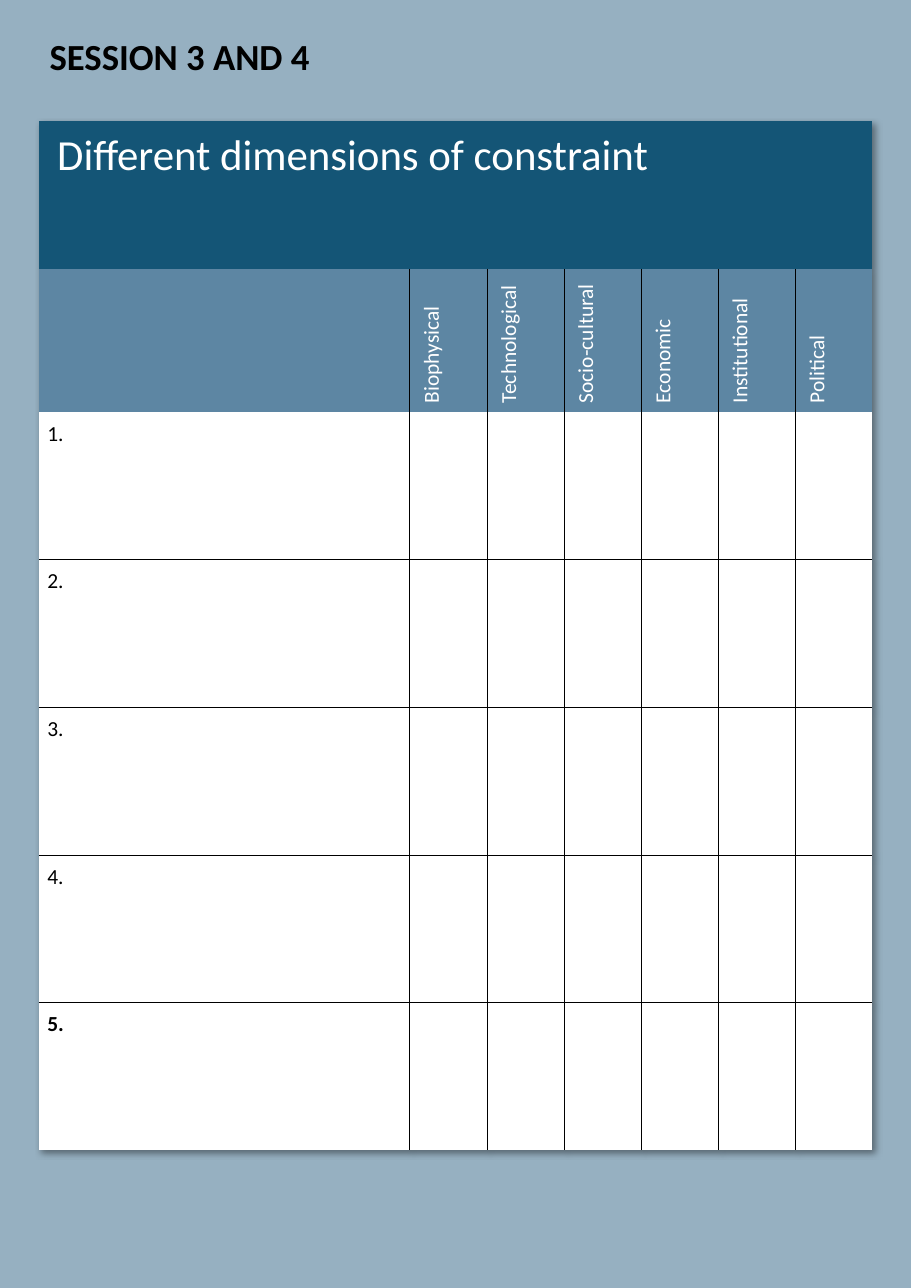
from lxml.etree import SubElement
from pptx import Presentation
from pptx.dml.color import RGBColor
from pptx.enum.text import MSO_ANCHOR, MSO_AUTO_SIZE, PP_ALIGN
from pptx.oxml.ns import qn
from pptx.util import Inches, Pt

COLORS = {
    "background": "96B0C1",
    "banner": "145576",
    "header": "5D86A3",
    "white": "FFFFFF",
    "black": "000000",
}
FONT = "Calibri"
SLIDE_W, SLIDE_H = 8.27, 11.69
LEFT, TABLE_TOP = 0.35, 1.1
NOTE_W, CHECK_W = 3.37, 0.7
ROW_H, HEADER_H = 1.34, 1.3
MARGIN = 0.08
DIMENSIONS = ["Biophysical", "Technological", "Socio-cultural",
              "Economic", "Institutional", "Political"]
CONSTRAINTS = 5
COLS, ROWS = 1 + len(DIMENSIONS), 2 + CONSTRAINTS
FIRST_BODY = 2


def rgb(name):
    return RGBColor.from_string(COLORS[name])


def add_run(tf, text, size, color, bold=False):
    p = tf.paragraphs[0]
    p.alignment = PP_ALIGN.LEFT
    r = p.add_run()
    r.text = text
    r.font.name = FONT
    r.font.size = Pt(size)
    r.font.bold = bold
    r.font.color.rgb = rgb(color)


def add_title(slide, text):
    sp = slide.shapes.title
    sp.left, sp.top = Inches(LEFT), Inches(0.26)
    sp.width, sp.height = Inches(SLIDE_W - 2 * LEFT), Inches(0.5)
    tf = sp.text_frame
    tf.word_wrap = True
    tf.auto_size = MSO_AUTO_SIZE.SHAPE_TO_FIT_TEXT
    tf.vertical_anchor = MSO_ANCHOR.TOP
    add_run(tf, text, 24, "black", bold=True)


def set_borders(cell, row, col):
    """Draw only the inner grid lines below the banner."""
    shown = {
        "lnL": row > 0 and col > 0,
        "lnR": row > 0 and col < COLS - 1,
        "lnT": row > FIRST_BODY,
        "lnB": FIRST_BODY <= row < ROWS - 1,
    }
    tc_pr = cell._tc.get_or_add_tcPr()
    for side, visible in shown.items():
        ln = SubElement(tc_pr, qn(f"a:{side}"), w=str(Pt(0.5)))
        if visible:
            fill = SubElement(ln, qn("a:solidFill"))
            SubElement(fill, qn("a:srgbClr"), val=COLORS["black"])
        else:
            SubElement(ln, qn("a:noFill"))


def style_cell(cell, row, col):
    set_borders(cell, row, col)
    cell.fill.solid()
    cell.fill.fore_color.rgb = rgb(
        ("banner", "header")[row] if row < FIRST_BODY else "white")
    cell.margin_left = cell.margin_right = Inches(MARGIN)
    cell.margin_top = cell.margin_bottom = Inches(MARGIN)


def add_shadow(table):
    effects = SubElement(table._tbl.tblPr, qn("a:effectLst"))
    shadow = SubElement(effects, qn("a:outerShdw"), blurRad=str(Pt(4)),
                        dist=str(Pt(3)), dir="2700000", algn="tl")
    color = SubElement(shadow, qn("a:srgbClr"), val=COLORS["black"])
    SubElement(color, qn("a:alpha"), val="40000")


def add_grid(slide):
    widths = [NOTE_W] + [CHECK_W] * len(DIMENSIONS)
    heights = [ROW_H, HEADER_H] + [ROW_H] * CONSTRAINTS
    table = slide.shapes.add_table(
        ROWS, COLS, Inches(LEFT), Inches(TABLE_TOP),
        Inches(sum(widths)), Inches(sum(heights))).table
    table.first_row = table.horz_banding = False
    for column, width in zip(table.columns, widths):
        column.width = Inches(width)
    for row, height in zip(table.rows, heights):
        row.height = Inches(height)
    for row in range(ROWS):
        for col in range(COLS):
            style_cell(table.cell(row, col), row, col)
    add_shadow(table)
    return table


def fill_grid(table):
    # Banner across all columns
    banner = table.cell(0, 0)
    banner.merge(table.cell(0, COLS - 1))
    banner.margin_left = Inches(0.17)
    add_run(banner.text_frame, "Different dimensions of constraint", 28, "white")

    # Rotated column headings
    for col, name in enumerate(DIMENSIONS, 1):
        cell = table.cell(1, col)
        cell.vertical_anchor = MSO_ANCHOR.MIDDLE
        cell._tc.get_or_add_tcPr().set("vert", "vert270")
        add_run(cell.text_frame, name, 14, "white")

    # Numbered rows, the last number in bold
    for number in range(1, CONSTRAINTS + 1):
        cell = table.cell(FIRST_BODY + number - 1, 0)
        add_run(cell.text_frame, f"{number}.", 14, "black",
                bold=number == CONSTRAINTS)


def main():
    prs = Presentation()
    prs.slide_width, prs.slide_height = Inches(SLIDE_W), Inches(SLIDE_H)
    slide = prs.slides.add_slide(prs.slide_layouts[5])
    slide.background.fill.solid()
    slide.background.fill.fore_color.rgb = rgb("background")

    fill_grid(add_grid(slide))
    add_title(slide, "SESSION 3 AND 4")
    prs.save("out.pptx")


if __name__ == "__main__":
    main()
